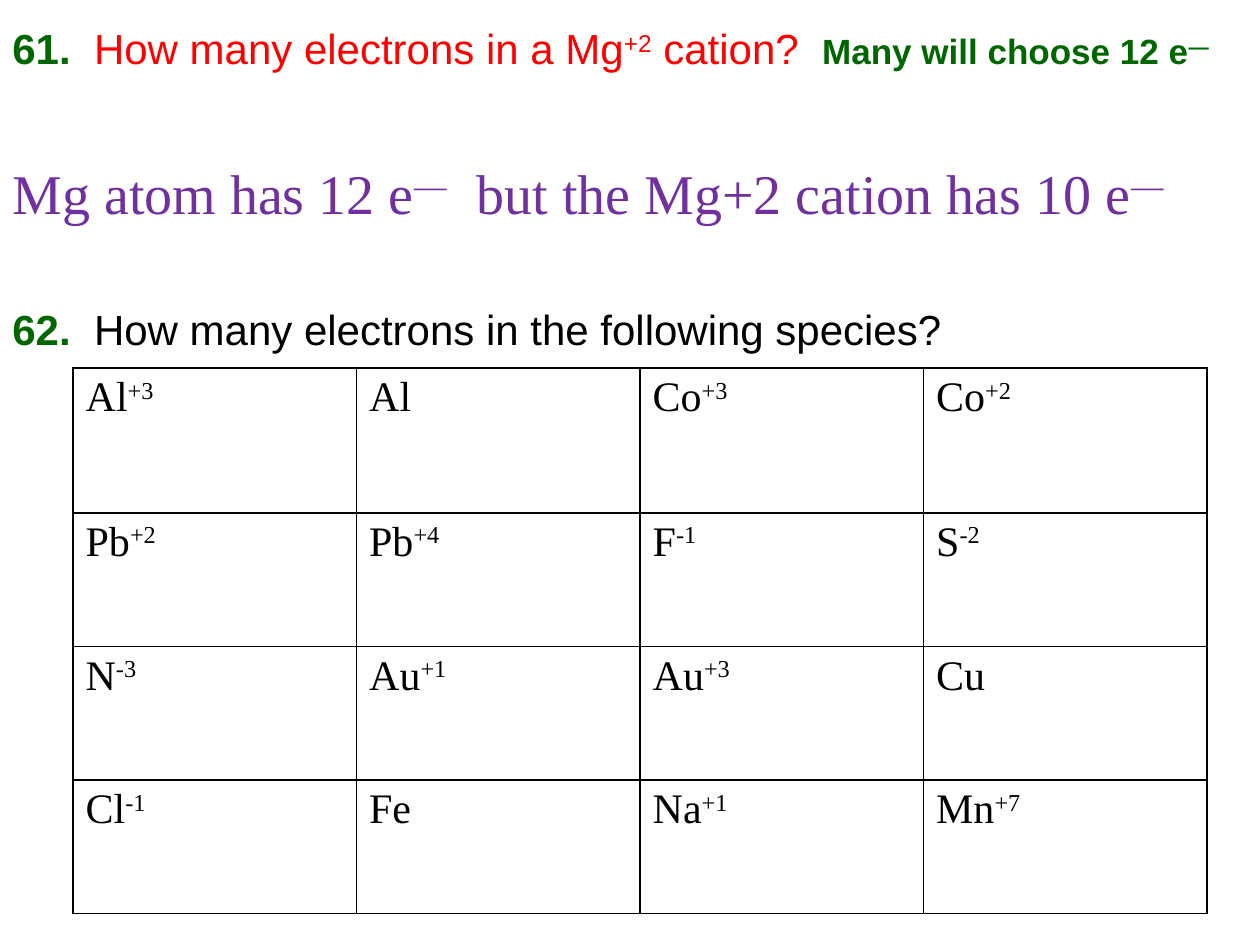
"""Build a slide of electron-counting questions with a table of atoms and ions."""
from lxml import etree
from pptx import Presentation
from pptx.dml.color import RGBColor
from pptx.enum.text import MSO_ANCHOR, MSO_AUTO_SIZE
from pptx.oxml.ns import qn
from pptx.util import Inches, Pt

TOP = MSO_ANCHOR.TOP
NO_AUTOFIT = MSO_AUTO_SIZE.NONE
BLANK_LAYOUT = 6

COLORS = {"number": "006600", "question": "FF0000", "answer": "7030A0", "ink": "000000"}

NUMBER = {"name": "Arial", "size": Pt(24), "bold": True, "color": "number"}
WARNING = {**NUMBER, "size": Pt(20)}
QUESTION = {**NUMBER, "bold": False, "color": "question"}
TASK = {**QUESTION, "color": "ink"}
ANSWER = {"name": "Times New Roman", "size": Pt(32), "bold": False, "color": "answer"}
SPECIES = {**ANSWER, "size": Pt(24), "color": "ink"}

QUESTIONS = [
    (0, [("61.", NUMBER, False),
         ("  How many electrons in a Mg", QUESTION, False),
         ("+2", QUESTION, True),
         (" cation?  ", QUESTION, False),
         ("Many will choose 12 e", WARNING, False),
         ("―", WARNING, True)]),
    (49, [("Mg atom has 12 e", ANSWER, False),
          ("―  ", ANSWER, True),
          (" but the Mg+2 cation has 10 e", ANSWER, False),
          ("―", ANSWER, True)]),
    (44, [("62.", NUMBER, False),
          ("  How many electrons in the following species?", TASK, False)]),
]

SPECIES_ROWS = [
    ["Al +3", "Al", "Co +3", "Co +2"],
    ["Pb +2", "Pb +4", "F -1", "S -2"],
    ["N -3", "Au +1", "Au +3", "Cu"],
    ["Cl -1", "Fe", "Na +1", "Mn +7"],
]
ROW_HEIGHTS = [1.15, 1.06, 1.06, 1.06]
COLUMN_WIDTH = 2.25


def add_run(paragraph, text, style, superscript=False):
    run = paragraph.add_run()
    run.text = text
    for attribute, value in style.items():
        if attribute == "color":
            run.font.color.rgb = RGBColor.from_string(COLORS[value])
        else:
            setattr(run.font, attribute, value)
    if superscript:
        run.font._element.set("baseline", "30000")


def add_questions(slide):
    frame = slide.shapes.add_textbox(0, Inches(0.08), Inches(10), Inches(3.23)).text_frame
    frame_format = {"word_wrap": True, "auto_size": NO_AUTOFIT,
                    "vertical_anchor": TOP, "margin_top": Inches(0.1)}
    for attribute, value in frame_format.items():
        setattr(frame, attribute, value)
    for index, (gap, runs) in enumerate(QUESTIONS):
        paragraph = frame.add_paragraph() if index else frame.paragraphs[0]
        paragraph.space_before = Pt(gap)
        for text, style, superscript in runs:
            add_run(paragraph, text, style, superscript)


def add_borders(cell):
    properties = cell._tc.get_or_add_tcPr()
    for side in ("a:lnL", "a:lnR", "a:lnT", "a:lnB"):
        line = etree.SubElement(properties, qn(side), w=str(Pt(1)))
        fill = etree.SubElement(line, qn("a:solidFill"))
        etree.SubElement(fill, qn("a:srgbClr"), val=COLORS["ink"])


def add_species_table(slide):
    columns = len(SPECIES_ROWS[0])
    table = slide.shapes.add_table(
        len(SPECIES_ROWS), columns, Inches(0.58), Inches(2.92),
        Inches(COLUMN_WIDTH * columns), Inches(sum(ROW_HEIGHTS))).table
    table.first_row = table.horz_banding = False
    for row, height, species_row in zip(table.rows, ROW_HEIGHTS, SPECIES_ROWS):
        row.height = Inches(height)
        for cell, species in zip(row.cells, species_row):
            symbol, _, charge = species.partition(" ")
            paragraph = cell.text_frame.paragraphs[0]
            add_run(paragraph, symbol, SPECIES)
            if charge:
                add_run(paragraph, charge, SPECIES, superscript=True)
            add_borders(cell)
            cell.fill.background()


def main():
    deck = Presentation()
    deck.slide_width, deck.slide_height = Inches(10), Inches(7.5)
    slide = deck.slides.add_slide(deck.slide_layouts[BLANK_LAYOUT])
    add_questions(slide)
    add_species_table(slide)
    deck.save("out.pptx")


if __name__ == "__main__":
    main()
